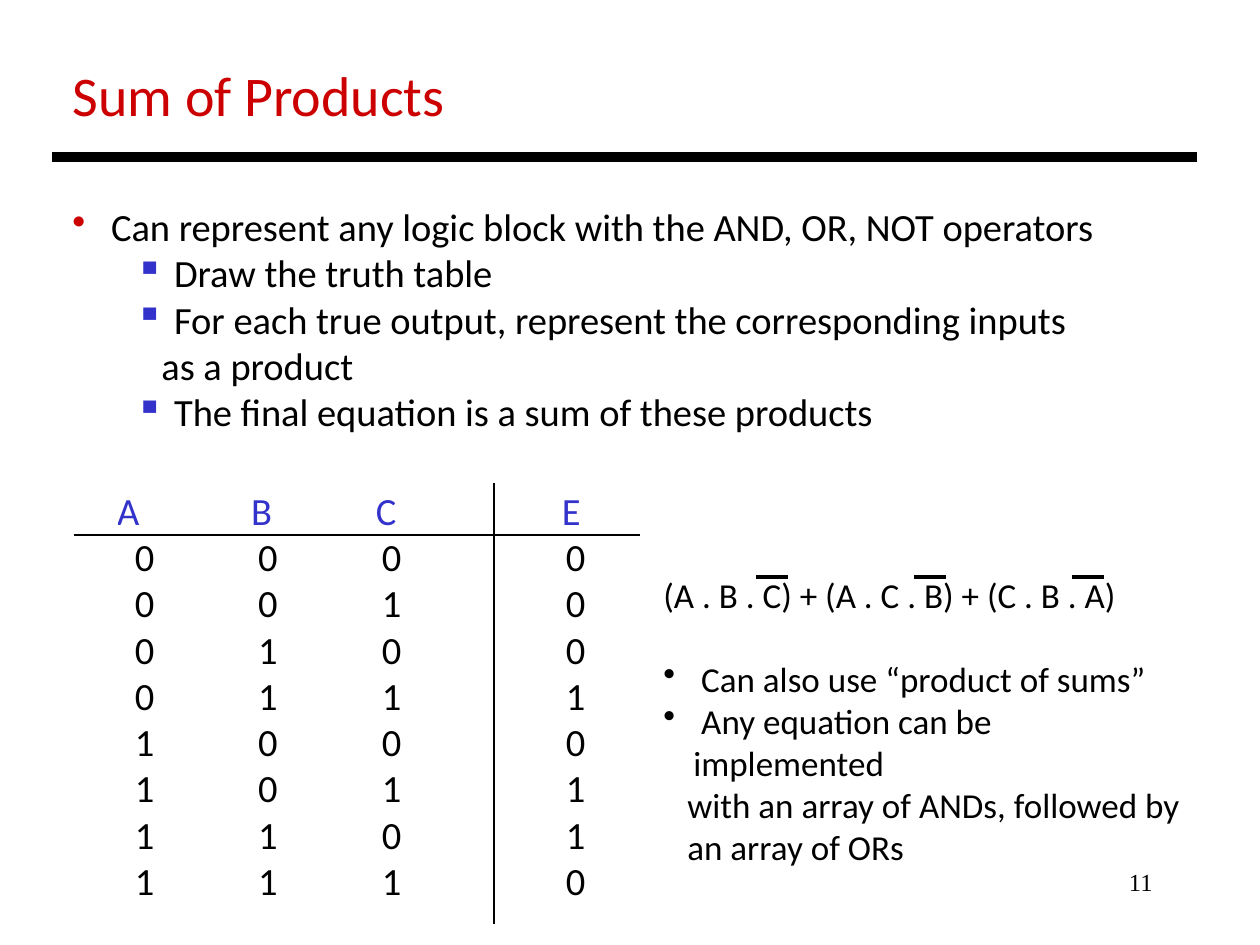
import pptx
import pptx.util
import pptx.dml.color
import pptx.enum.shapes
import pptx.enum.text
from lxml import etree

PX = 914400 // 126  # EMU per px
COLORS = {"black": "000000", "red": "CC0000", "blue": "3333CC"}
BODY = {"size": pptx.util.Pt(22), "name": "Calibri"}
NOTES = {"size": pptx.util.Pt(20), "name": "Calibri"}
NUMBER = {"size": pptx.util.Pt(14), "name": "Times New Roman"}
TITLE = {"size": pptx.util.Pt(32), "name": "Calibri"}
LEFT = pptx.enum.text.PP_ALIGN.LEFT
RIGHT = pptx.enum.text.PP_ALIGN.RIGHT


def write_lines(frame, lines, font, align=LEFT):
    """Each line: text, colour, left margin in px, bullet, bullet colour, space before in pt."""
    frame.word_wrap = True
    frame.vertical_anchor = pptx.enum.text.MSO_ANCHOR.TOP
    for i, (text, color, margin, bullet, bullet_color, before) in enumerate(lines):
        paragraph = frame.paragraphs[0] if i == 0 else frame.add_paragraph()
        paragraph.alignment = align
        paragraph.space_before = pptx.util.Pt(before)
        run = paragraph.add_run()
        run.text = text
        for key, value in font.items():
            setattr(run.font, key, value)
        run.font.color.rgb = pptx.dml.color.RGBColor.from_string(COLORS[color])
        props = paragraph._p.get_or_add_pPr()
        props.set("marL", str(margin * PX))
        props.set("indent", str(-30 * PX if bullet else 0))
        if bullet:
            tint = etree.SubElement(props, pptx.oxml.ns.qn("a:buClr"))
            etree.SubElement(tint, pptx.oxml.ns.qn("a:srgbClr"), val=COLORS[bullet_color])
            etree.SubElement(props, pptx.oxml.ns.qn("a:buChar"), char=bullet)


def draw_rule(x1, y1, x2, y2, width):
    rule = slide.shapes.add_connector(
        pptx.enum.shapes.MSO_CONNECTOR.STRAIGHT, x1 * PX, y1 * PX, x2 * PX, y2 * PX)
    rule.line.width = pptx.util.Pt(width)
    rule.line.color.rgb = pptx.dml.color.RGBColor.from_string(COLORS["black"])
    etree.SubElement(rule._element.spPr, pptx.oxml.ns.qn("a:effectLst"))


deck = pptx.Presentation()
deck.slide_width = pptx.util.Inches(10)
deck.slide_height = pptx.util.Inches(7.5)
slide = deck.slides.add_slide(deck.slide_layouts[5])

# Title and the bar under it
title = slide.shapes.title
frame = {"left": 60, "top": 54, "width": 1137, "height": 81}
for key, value in frame.items():
    setattr(title, key, value * PX)
title.text_frame.auto_size = pptx.enum.text.MSO_AUTO_SIZE.NONE
write_lines(title.text_frame, [("Sum of Products", "red", 0, "", "", 0)], TITLE)
draw_rule(52, 157, 1197, 157, 6)

# Steps
steps = slide.shapes.add_textbox(60 * PX, 197 * PX, 1137 * PX, 246 * PX)
write_lines(steps.text_frame, [
    (" Can represent any logic block with the AND, OR, NOT operators", "black", 30, "•", "red", 0),
    (" Draw the truth table", "black", 93, "▪", "blue", 0),
    (" For each true output, represent the corresponding inputs", "black", 93, "▪", "blue", 0),
    ("as a product", "black", 89, "", "", 0),
    (" The final equation is a sum of these products", "black", 93, "▪", "blue", 0),
], BODY)

# Truth table: output E is true when exactly two inputs are true
columns = [("A", 117, 18), ("B", 251, 7), ("C", 376, 6), ("E", 562, 4)]  # name, left, digit indent
edges = [left for _, left, _ in columns] + [640]
truth = [(n >> 2 & 1, n >> 1 & 1, n & 1) for n in range(8)]
rows = [[name for name, _, _ in columns]]
rows += [[*inputs, int(sum(inputs) == 2)] for inputs in truth]

table = slide.shapes.add_table(
    len(rows), len(columns), edges[0] * PX, 489 * PX,
    (edges[-1] - edges[0]) * PX, 46 * len(rows) * PX).table
table.first_row = False
table.horz_banding = False
for c, column in enumerate(table.columns):
    column.width = (edges[c + 1] - edges[c]) * PX
for r, row in enumerate(rows):
    table.rows[r].height = 46 * PX
    for c, value in enumerate(row):
        cell = table.cell(r, c)
        cell.fill.background()
        indent = columns[c][2] if r else 0
        margins = {"margin_left": indent * PX, "margin_right": 0, "margin_top": 0, "margin_bottom": 0}
        for key, margin in margins.items():
            setattr(cell, key, margin)
        write_lines(cell.text_frame, [(str(value), "black" if r else "blue", 0, "", "", 0)], BODY)
draw_rule(74, 535, 640, 535, 0.75)
draw_rule(494, 483, 494, 924, 0.75)

# Equation and remarks
remarks = slide.shapes.add_textbox(651 * PX, 567 * PX, 546 * PX, 267 * PX)
write_lines(remarks.text_frame, [
    ("(A . B . C) + (A . C . B) + (C . B . A)", "black", 0, "", "", 0),
    (" Can also use “product of sums”", "black", 30, "•", "black", 24),
    (" Any equation can be implemented", "black", 30, "•", "black", 0),
    ("with an array of ANDs, followed by", "black", 24, "", "", 0),
    ("an array of ORs", "black", 24, "", "", 0),
], NOTES)

# Bars over the negated inputs
for term in range(3):
    bar_left = 756 + 158 * term
    draw_rule(bar_left, 577, bar_left + 32, 577, 2.25)

# Slide number
number = slide.shapes.add_textbox(903 * PX, 861 * PX, 262 * PX, 63 * PX)
write_lines(number.text_frame, [("11", "black", 0, "", "", 0)], NUMBER, RIGHT)

deck.save("out.pptx")
